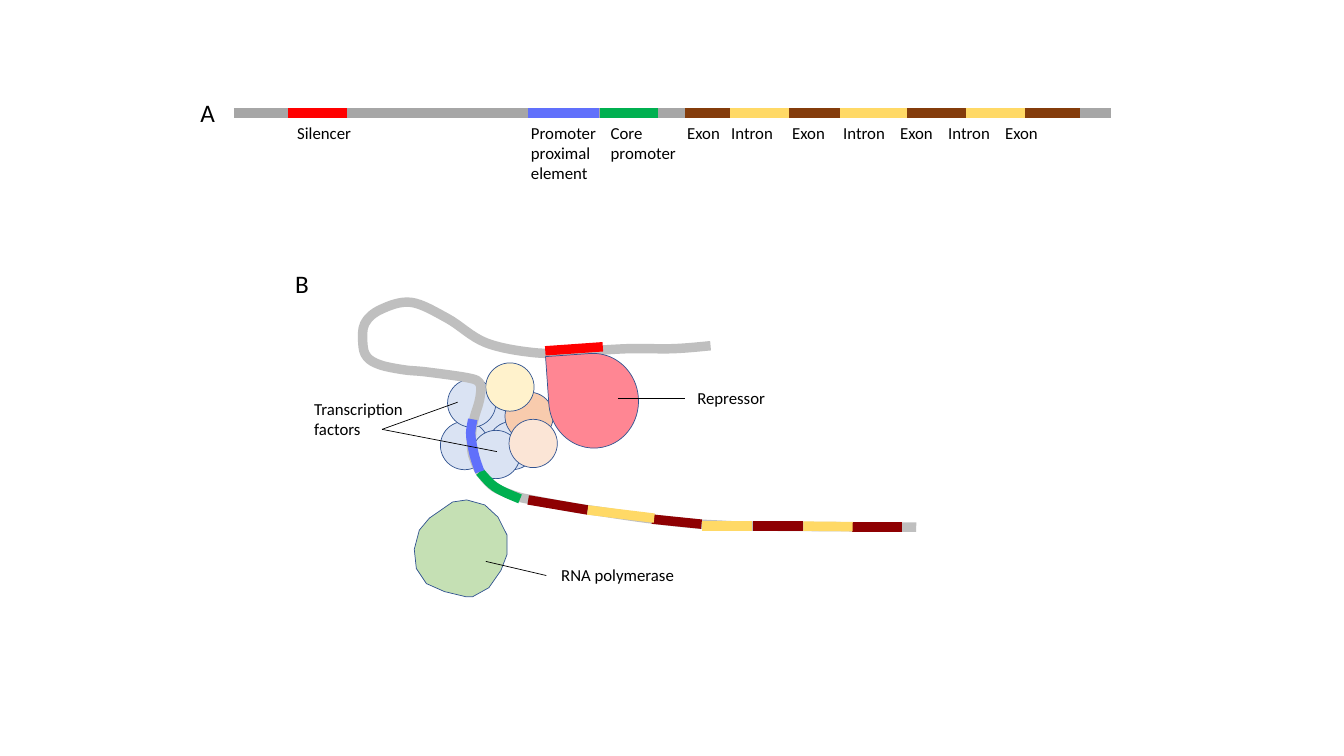
from lxml.etree import SubElement
from pptx import Presentation
from pptx.dml.color import RGBColor
from pptx.enum.shapes import MSO_CONNECTOR as Link, MSO_SHAPE as Shape
from pptx.enum.text import MSO_AUTO_SIZE as AutoSize
from pptx.oxml.ns import qn
from pptx.util import Pt

BLACK = RGBColor(0x00, 0x00, 0x00)
DARK_GRAY = RGBColor(0xA6, 0xA6, 0xA6)
GRAY = RGBColor(0xBF, 0xBF, 0xBF)
BROWN = RGBColor(0x84, 0x3C, 0x0B)
MAROON = RGBColor(0x8E, 0x00, 0x02)
YELLOW = RGBColor(0xFF, 0xD9, 0x66)
RED = RGBColor(0xFF, 0x00, 0x00)
GREEN = RGBColor(0x00, 0xB0, 0x50)
BLUE = RGBColor(0x60, 0x70, 0xFB)
OUTLINE = RGBColor(0x32, 0x54, 0x91)
PALE_BLUE = RGBColor(0xDA, 0xE3, 0xF3)
PALE_GREEN = RGBColor(0xC5, 0xE0, 0xB4)
PALE_YELLOW = RGBColor(0xFF, 0xF2, 0xCC)
ORANGE = RGBColor(0xF8, 0xCB, 0xAD)
PEACH = RGBColor(0xFB, 0xE5, 0xD6)
PINK = RGBColor(0xFF, 0x86, 0x93)

GENE_Y = 80.6
GENE_SEGMENTS = [
    (DARK_GRAY, 167, 793.4), (BROWN, 489.6, 521.3), (BROWN, 563.8, 600.5),
    (BROWN, 645.1, 689.8), (BROWN, 732.2, 771.8), (YELLOW, 689.8, 732.2),
    (YELLOW, 599.8, 648), (YELLOW, 521.3, 563.8), (RED, 205.9, 247.7),
    (GREEN, 428.4, 470.2), (BLUE, 377.3, 427.7),
]
GENE_LABELS = [
    ("Silencer", 205.2, 53.3, 21.6, False),
    ("Promoter proximal element", 372.2, 77, 51.1, True),
    ("Core promoter", 429.1, 64.8, 36, True),
]
EXON_TABS = [31.4, 75, 111.4, 152.1, 186.4, 227.1]
FACTORS = [
    (PALE_BLUE, 337, 288.7), (PALE_BLUE, 348.5, 301), (PALE_BLUE, 314.6, 301),
    (PALE_BLUE, 337, 307.4), (ORANGE, 360.7, 280.1), (PEACH, 363.6, 299.5),
    (PALE_BLUE, 319.7, 270.7), (PALE_YELLOW, 347, 259.2),
]
POLYMERASE = [
    (323.3, 358.6), (306.7, 370.1), (299.5, 378.7), (295.9, 392.4), (297.4, 406.1),
    (304.6, 416.9), (317.5, 422.6), (332.6, 426.2), (337.7, 426.2), (349.2, 419.8),
    (357.8, 407.5), (362.2, 396), (362.2, 382.3), (355.7, 369.4), (346.3, 360.7),
    (333.4, 357.1),
]
STRAND = [
    (507.6, 247), (481, 249.1), (448.6, 249.1), (409.7, 251.3), (382.3, 252),
    (347, 244.8), (319.7, 227.5), (293.8, 216), (272.2, 221), (260.6, 231.1),
    (259.2, 245.5), (262.1, 254.9), (271.4, 260.6), (288.7, 264.2), (304.6, 265.7),
    (334.8, 270), (342.7, 273.6), (343.4, 280.1), (342, 288), (339.1, 297.4),
    (337, 308.2), (337, 321.1), (339.1, 329), (343.4, 337.7), (352.8, 347.8),
    (367.9, 354.2), (380.2, 357.1), (407.5, 362.2), (431.3, 365.8), (460.8, 370.1),
    (491.8, 373.7), (514.1, 375.1), (538.6, 375.8), (654.5, 376.6),
]
CORE_PROMOTER = [(371.5, 356.4), (361.4, 352.1), (353.5, 347.8), (348.5, 343.4), (342.7, 337)]
PROXIMAL_ELEMENT = [(342.7, 337), (339.1, 326.2), (337, 316.1), (336.2, 308.9), (337.7, 299.5)]
FOLDED_SEGMENTS = [
    (MAROON, (377.3, 357.1), (419.8, 364.3)), (MAROON, (465.8, 370.8), (501.1, 374.4)),
    (YELLOW, (419.8, 364.3), (467.3, 370.1)), (MAROON, (537.8, 375.8), (573.8, 375.8)),
    (YELLOW, (501.1, 375.8), (537.1, 375.8)), (RED, (389.5, 250.6), (430.6, 247.7)),
    (MAROON, (608.4, 376.6), (644.4, 376.6)), (YELLOW, (573.8, 375.8), (609.1, 376.2)),
]
LEADERS = [
    ((441.4, 284.4), (489.6, 284.4)), ((390.2, 411.1), (347, 401)),
    ((272.9, 306.7), (326.9, 287.3)), ((272.9, 306.7), (355, 322.6)),
]
LABELS = [
    ("Repressor", 491, 273.6, 64.8, 21.6, 12, False),
    ("RNA polymerase", 393.8, 399.6, 98.6, 21.6, 12, False),
    ("A", 136.1, 66.2, 26.6, 28.8, 18, False),
    ("B", 203.8, 187.9, 24.5, 28.8, 18, False),
    ("Transcription factors", 217.4, 281.5, 82.1, 36, 12, True),
]


class Diagram:
    font = "Calibri"
    strand_width = 6.75
    thin = 0.5

    def __init__(self, page):
        self.page = page
        self.shapes = page.shapes

    def open_group(self):
        self.shapes = self.page.shapes.add_group_shape().shapes

    def close_group(self):
        self.shapes = self.page.shapes

    def line(self, start, end, color, width):
        line = self.shapes.add_connector(Link.STRAIGHT, *map(Pt, start + end))
        line.line.color.rgb = color
        line.line.width = Pt(width)
        SubElement(line._element.spPr, qn("a:effectLst"))

    def paint(self, shape, fill, color, width):
        shape.shadow.inherit = False
        if fill is None:
            shape.fill.background()
        else:
            shape.fill.solid()
            shape.fill.fore_color.rgb = fill
        shape.line.color.rgb = color
        shape.line.width = Pt(width)

    def preset(self, kind, left, top, width, height, fill, rotation=0):
        shape = self.shapes.add_shape(kind, Pt(left), Pt(top), Pt(width), Pt(height))
        shape.rotation = rotation
        self.paint(shape, fill, OUTLINE, self.thin)

    def outline(self, points, close):
        first, *rest = [(Pt(x), Pt(y)) for x, y in points]
        builder = self.shapes.build_freeform(*first)
        builder.add_line_segments(rest, close=close)
        return builder.convert_to_shape()

    def polygon(self, points, fill):
        self.paint(self.outline(points, True), fill, OUTLINE, self.thin)

    def curve(self, knots, color):
        padded = [knots[0], *knots, knots[-1]]
        points = [knots[0]]
        for before, start, end, after in zip(padded, padded[1:], padded[2:], padded[3:]):
            leave = tuple(s + (e - b) / 6 for b, s, e in zip(before, start, end))
            arrive = tuple(e - (a - s) / 6 for s, e, a in zip(start, end, after))
            points += [leave, arrive, end]
        shape = self.outline(points, False)
        track = next(shape._element.iter(qn("a:path")))
        steps = track.findall(qn("a:lnTo"))
        for index in range(0, len(steps), 3):
            bezier = SubElement(track, qn("a:cubicBezTo"))
            for step in steps[index:index + 3]:
                bezier.append(step[0])
                track.remove(step)
        self.paint(shape, None, color, self.strand_width)

    def text(self, words, left, top, width, height, size=12, wrap=True, tabs=()):
        box = self.shapes.add_textbox(Pt(left), Pt(top), Pt(width), Pt(height))
        frame = box.text_frame
        frame.word_wrap = wrap
        frame.auto_size = AutoSize.SHAPE_TO_FIT_TEXT
        para = frame.paragraphs[0]
        if tabs:
            stops = SubElement(para._p.get_or_add_pPr(), qn("a:tabLst"))
            for tab in tabs:
                SubElement(stops, qn("a:tab"), pos=str(Pt(tab)), algn="l")
        span = para.add_run()
        span.text = words
        span.font.name = self.font
        span.font.size = Pt(size)
        span.font.color.rgb = BLACK


def main():
    deck = Presentation()
    deck.slide_width, deck.slide_height = Pt(960), Pt(540)
    diagram = Diagram(deck.slides.add_slide(deck.slide_layouts[6]))

    diagram.open_group()
    for color, start, end in GENE_SEGMENTS:
        diagram.line((start, GENE_Y), (end, GENE_Y), color, diagram.strand_width)
    for words, left, width, height, wrap in GENE_LABELS:
        diagram.text(words, left, 84.2, width, height, wrap=wrap)
    parts = ["Exon", "Intron"] * 3 + ["Exon"]
    diagram.text("\t".join(parts), 483.8, 84.2, 293, 21.6, tabs=EXON_TABS)
    diagram.close_group()

    diagram.polygon(POLYMERASE, PALE_GREEN)
    diagram.open_group()
    for fill, left, top in FACTORS:
        diagram.preset(Shape.OVAL, left, top, 34.5, 34.5, fill)
    diagram.close_group()

    diagram.curve(STRAND, GRAY)
    diagram.curve(CORE_PROMOTER, GREEN)
    diagram.curve(PROXIMAL_ELEMENT, BLUE)
    diagram.preset(Shape.TEAR, 390.2, 254.2, 67.7, 64.1, PINK, 266)
    for color, start, end in FOLDED_SEGMENTS:
        diagram.line(start, end, color, diagram.strand_width)
    for label in LABELS:
        diagram.text(*label)
    for start, end in LEADERS:
        diagram.line(start, end, BLACK, diagram.thin)
    deck.save("out.pptx")


if __name__ == "__main__":
    main()
